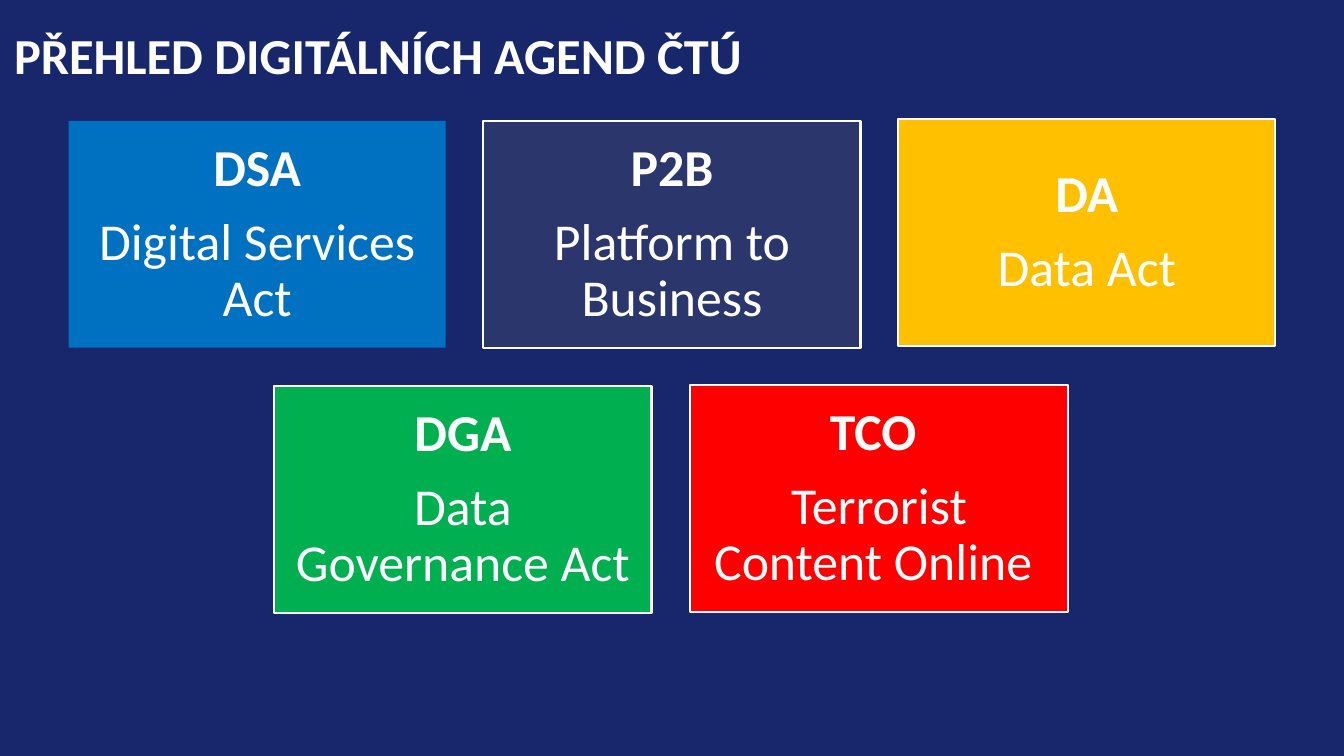
"""Build the overview slide of digital agendas."""
from dataclasses import dataclass

from pptx import Presentation
from pptx.dml.color import RGBColor
from pptx.enum.shapes import MSO_SHAPE
from pptx.enum.text import MSO_ANCHOR, PP_ALIGN
from pptx.slide import Slide
from pptx.text.text import _Paragraph
from pptx.util import Pt


@dataclass(frozen=True)
class Theme:
    """Colours and type sizes of the slide."""
    font: str = "Calibri"
    title_size: float = 36
    card_size: float = 37
    background: str = "18276C"
    white: str = "FFFFFF"
    blue: str = "0070C0"
    navy: str = "2B366C"
    amber: str = "FFC000"
    green: str = "00B050"
    red: str = "FF0000"


@dataclass(frozen=True)
class Agenda:
    """One card: abbreviation, full name, fill, top edge and outline."""
    code: str
    name: str
    fill: str
    top: float
    outlined: bool = True


@dataclass(frozen=True)
class Row:
    """A row of equally spaced cards."""
    left: float
    step: float
    agendas: tuple[Agenda, ...]


THEME = Theme()
CARD_W, CARD_H, CARD_INSET = 269.4, 162, 10.8
ROWS = (
    Row(49, 296.3, (
        Agenda("DSA", "Digital Services Act", THEME.blue, 86.4, outlined=False),
        Agenda("P2B", "Platform to Business", THEME.navy, 86.4),
        Agenda("DA", "Data Act", THEME.amber, 85),
    )),
    Row(196, 297.2, (
        Agenda("DGA", "Data Governance Act", THEME.green, 275.8),
        Agenda("TCO ", "Terrorist Content Online ", THEME.red, 275),
    )),
)


def color(value: str) -> RGBColor:
    """Turn a hex string into a colour."""
    return RGBColor.from_string(value)


def add_run(p: _Paragraph, text: str, size: float, bold: bool) -> None:
    """Append one white run to a paragraph."""
    r = p.add_run()
    r.text = text
    r.font.name = THEME.font
    r.font.size = Pt(size)
    r.font.bold = bold
    r.font.color.rgb = color(THEME.white)


def add_title(s: Slide, text: str) -> None:
    """Add the slide heading."""
    tf = s.shapes.add_textbox(Pt(10), Pt(16), Pt(940), Pt(46)).text_frame
    tf.word_wrap = True
    tf.vertical_anchor = MSO_ANCHOR.MIDDLE
    tf.margin_left = tf.margin_right = tf.margin_top = tf.margin_bottom = 0
    add_run(tf.paragraphs[0], text, THEME.title_size, True)


def add_card(s: Slide, agenda: Agenda, left: float) -> None:
    """Add one coloured card with its abbreviation and full name."""
    sp = s.shapes.add_shape(MSO_SHAPE.RECTANGLE, Pt(left), Pt(agenda.top),
                            Pt(CARD_W), Pt(CARD_H))
    sp.shadow.inherit = False
    sp.fill.solid()
    sp.fill.fore_color.rgb = color(agenda.fill)
    if agenda.outlined:
        sp.line.color.rgb = color(THEME.white)
        sp.line.width = Pt(1.5)
    else:
        sp.line.fill.background()
    tf = sp.text_frame
    tf.word_wrap = True
    tf.vertical_anchor = MSO_ANCHOR.MIDDLE
    tf.margin_left = tf.margin_right = Pt(CARD_INSET)
    tf.margin_top = tf.margin_bottom = Pt(CARD_INSET)
    code, name = tf.paragraphs[0], tf.add_paragraph()
    for p, text, bold in ((code, agenda.code, True), (name, agenda.name, False)):
        p.alignment = PP_ALIGN.CENTER
        p.line_spacing = 0.9
        p.space_after = Pt(13)
        add_run(p, text, THEME.card_size, bold)


def main() -> None:
    """Build and save the presentation."""
    prs = Presentation()
    prs.slide_width, prs.slide_height = Pt(960), Pt(540)
    s = prs.slides.add_slide(prs.slide_layouts[6])
    s.background.fill.solid()
    s.background.fill.fore_color.rgb = color(THEME.background)
    add_title(s, "PŘEHLED DIGITÁLNÍCH AGEND ČTÚ")
    for row in ROWS:
        for i, agenda in enumerate(row.agendas):
            add_card(s, agenda, row.left + i * row.step)
    prs.save("out.pptx")


if __name__ == "__main__":
    main()
